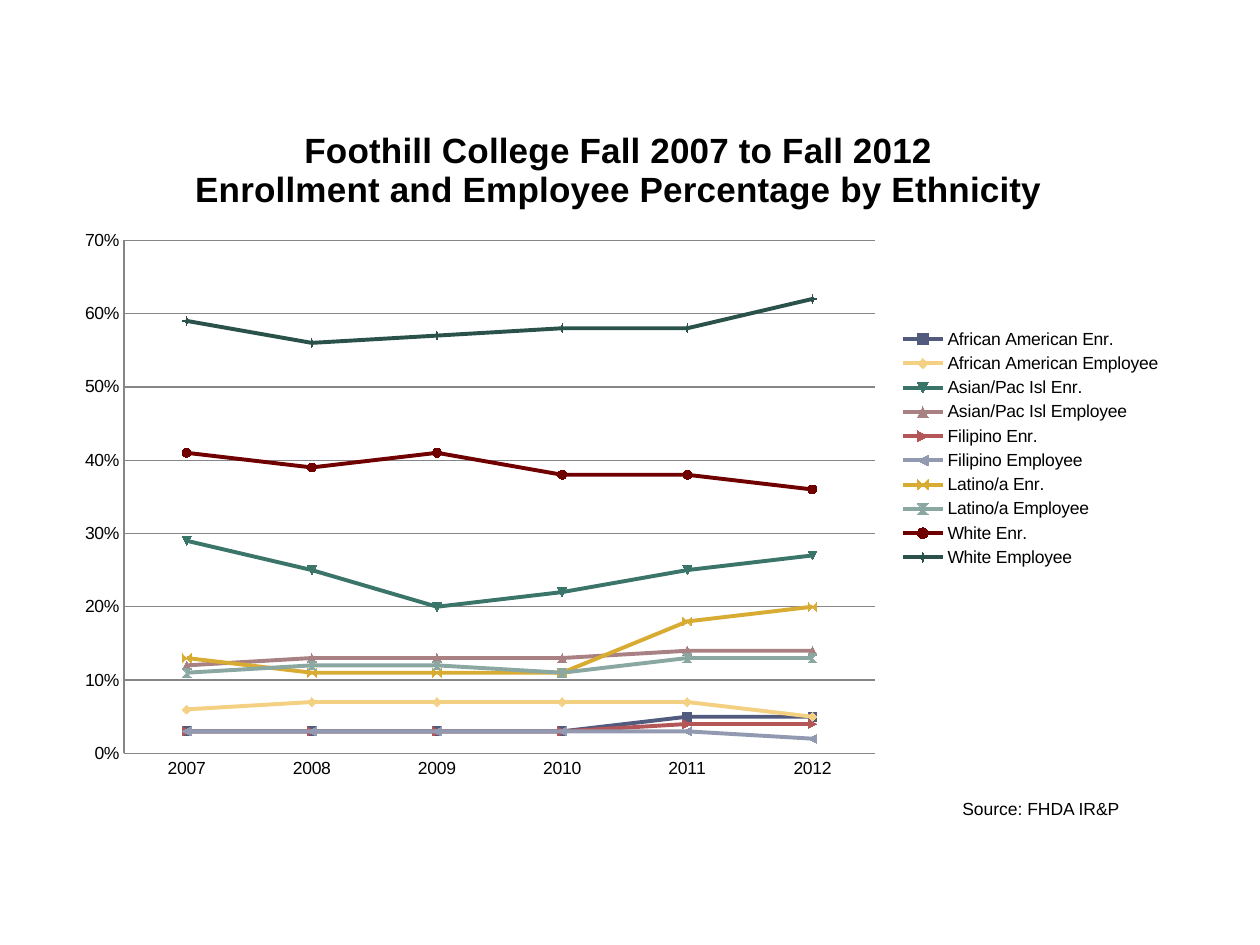
from dataclasses import dataclass
from typing import NamedTuple

from lxml.etree import SubElement
from pptx import Presentation
from pptx.chart.chart import Chart
from pptx.chart.data import CategoryChartData
from pptx.dml.color import RGBColor as RGB
from pptx.enum.chart import XL_CHART_TYPE as Kind
from pptx.enum.chart import XL_LEGEND_POSITION as Side
from pptx.enum.chart import XL_TICK_MARK as Tick
from pptx.oxml.ns import qn
from pptx.util import Pt

PX = 914400 // 126


class Box(NamedTuple):
    left: int
    top: int
    width: int
    height: int

    def emu(self) -> list[int]:
        return [n * PX for n in self]


class Line(NamedTuple):
    name: str
    color: str
    shares: list[int]


@dataclass(frozen=True)
class Theme:
    font: str = "Arial"
    ink: str = "000000"
    grid: str = "868686"
    body: int = 10
    title: int = 20
    stroke: float = 2.25
    hair: float = 0.75
    mark: int = 5


THEME = Theme()
PAGE = Box(0, 0, 1260, 945)
FRAME = Box(63, 105, 1111, 687)
PLOT = Box(124, 240, 751, 513)
LEGEND = Box(900, 325, 262, 247)
SOURCE = Box(950, 792, 261, 34)

YEARS = [str(year) for year in range(2007, 2013)]
TITLE = ("Foothill College Fall 2007 to Fall 2012\n"
         "Enrollment and Employee Percentage by Ethnicity")
LINES = [
    Line("African American Enr.", "525A7E", [3, 3, 3, 3, 5, 5]),
    Line("African American Employee", "F3D082", [6, 7, 7, 7, 7, 5]),
    Line("Asian/Pac Isl Enr.", "3B7569", [29, 25, 20, 22, 25, 27]),
    Line("Asian/Pac Isl Employee", "A98182", [12, 13, 13, 13, 14, 14]),
    Line("Filipino Enr.", "B45557", [3, 3, 3, 3, 4, 4]),
    Line("Filipino Employee", "929AB2", [3, 3, 3, 3, 3, 2]),
    Line("Latino/a Enr.", "D8AC32", [13, 11, 11, 11, 18, 20]),
    Line("Latino/a Employee", "8AA8A1", [11, 12, 12, 11, 13, 13]),
    Line("White Enr.", "700000", [41, 39, 41, 38, 38, 36]),
    Line("White Employee", "2A524B", [59, 56, 57, 58, 58, 62]),
]


def style(font, size: int, bold: bool = False) -> None:
    font.name, font.size, font.bold = THEME.font, Pt(size), bold
    font.color.rgb = RGB.from_string(THEME.ink)


def stroke(line, color: str, width: float) -> None:
    line.color.rgb = RGB.from_string(color)
    line.width = Pt(width)


def place(node, index: int, box: Box, inner: bool = False) -> None:
    """Give a chart part a fixed place, as shares of the chart frame."""
    for old in node.findall(qn("c:layout")):
        node.remove(old)
    layout = SubElement(node, qn("c:layout"))
    node.insert(index, layout)
    manual = SubElement(layout, qn("c:manualLayout"))
    rules = {"layoutTarget": "inner"} if inner else {}
    rules |= {"xMode": "edge", "yMode": "edge"}
    rules |= {
        "x": round((box.left - FRAME.left) / FRAME.width, 3),
        "y": round((box.top - FRAME.top) / FRAME.height, 3),
        "w": round(box.width / FRAME.width, 3),
        "h": round(box.height / FRAME.height, 3),
    }
    for tag, val in rules.items():
        SubElement(manual, qn(f"c:{tag}")).set("val", str(val))


def set_title(chart: Chart) -> None:
    chart.has_title = True
    frame = chart.chart_title.text_frame
    frame.text = TITLE
    for para in frame.paragraphs:
        for run in para.runs:
            style(run.font, THEME.title, True)
    chart.chart_title.include_in_layout = False


def set_axes(chart: Chart) -> None:
    value = chart.value_axis
    value.minimum_scale, value.maximum_scale, value.major_unit = 0, 0.7, 0.1
    value.has_major_gridlines = True
    stroke(value.major_gridlines.format.line, THEME.grid, THEME.hair)
    value.tick_labels.number_format = "0%"
    value.tick_labels.number_format_is_linked = False
    for axis in (value, chart.category_axis):
        axis.major_tick_mark = axis.minor_tick_mark = Tick.NONE
        stroke(axis.format.line, THEME.grid, THEME.hair)
        style(axis.tick_labels.font, THEME.body)


def set_legend(chart: Chart) -> None:
    chart.has_legend = True
    legend = chart.legend
    legend.position = Side.RIGHT
    legend.include_in_layout = False
    style(legend.font, THEME.body)
    place(legend._element, 1, LEGEND)


def set_lines(chart: Chart) -> None:
    for series, line in zip(chart.plots[0].series, LINES):
        series.smooth = False
        stroke(series.format.line, line.color, THEME.stroke)
        mark = series.marker
        mark.size = THEME.mark
        mark.format.fill.solid()
        mark.format.fill.fore_color.rgb = RGB.from_string(line.color)
        stroke(mark.format.line, line.color, THEME.hair)


def add_lines(slide) -> None:
    data = CategoryChartData(number_format="0%")
    data.categories = YEARS
    for line in LINES:
        data.add_series(line.name, [n / 100 for n in line.shares])
    chart = slide.shapes.add_chart(Kind.LINE_MARKERS, *FRAME.emu(), data).chart
    style(chart.font, THEME.body)
    chart.plots[0].vary_by_categories = False
    set_title(chart)
    set_axes(chart)
    set_legend(chart)
    set_lines(chart)
    place(chart._chartSpace.find(".//" + qn("c:plotArea")), 0, PLOT, True)


def add_source(slide) -> None:
    frame = slide.shapes.add_textbox(*SOURCE.emu()).text_frame
    frame.word_wrap = True
    frame.text = "Source: FHDA IR&P"
    style(frame.paragraphs[0].runs[0].font, THEME.body)


def main() -> None:
    deck = Presentation()
    deck.slide_width, deck.slide_height = PAGE.emu()[2:]
    slide = deck.slides.add_slide(deck.slide_layouts[6])
    add_lines(slide)
    add_source(slide)
    deck.save("out.pptx")


if __name__ == "__main__":
    main()
